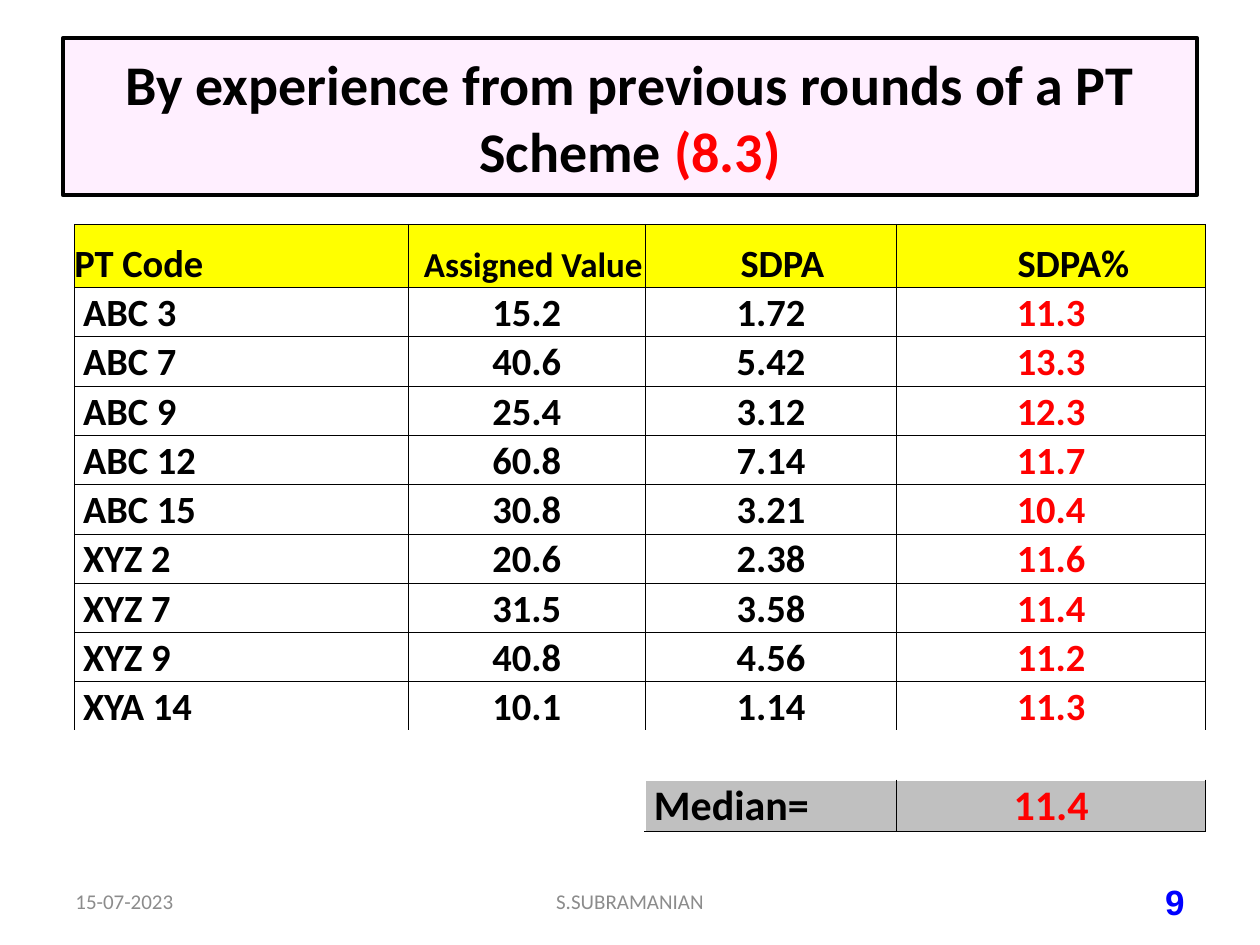
from dataclasses import dataclass

from lxml.etree import SubElement
from pptx import Presentation
from pptx.dml.color import RGBColor
from pptx.enum.text import MSO_ANCHOR, MSO_AUTO_SIZE, PP_ALIGN
from pptx.oxml import parse_xml
from pptx.oxml.ns import nsdecls, qn
from pptx.util import Pt


@dataclass(frozen=True)
class Theme:
    font: str = "Calibri"
    number_font: str = "Arial"
    black: str = "000000"
    red: str = "FF0000"
    blue: str = "0000FF"
    grey: str = "8C8C8C"
    title_fill: str = "FFEFFF"
    header_fill: str = "FFFF00"
    median_fill: str = "C0C0C0"
    title_size: int = 32
    median_size: int = 24
    body_size: int = 22
    small_header_size: int = 20
    number_size: int = 20
    footer_size: int = 12


theme = Theme()


def style_run(run, size, color, bold=True, font=theme.font):
    run.font.name = font
    run.font.size = Pt(size)
    run.font.bold = bold
    run.font.color.rgb = RGBColor.from_string(color)


def add_borders(cell):
    properties = cell._tc.get_or_add_tcPr()
    for position, side in enumerate(("lnL", "lnR", "lnT", "lnB")):
        line = parse_xml(f'<a:{side} {nsdecls("a")} w="{Pt(0.5)}"/>')
        fill = SubElement(line, qn("a:solidFill"))
        SubElement(fill, qn("a:srgbClr"), val=theme.black)
        properties.insert(position, line)


presentation = Presentation()
presentation.slide_width, presentation.slide_height = Pt(720), Pt(540)
slide = presentation.slides.add_slide(presentation.slide_layouts[5])

# Title
title = slide.shapes.title
title.left, title.top, title.width, title.height = Pt(36), Pt(21.6), Pt(648), Pt(90)
title.fill.solid()
title.fill.fore_color.rgb = RGBColor.from_string(theme.title_fill)
title.line.color.rgb = RGBColor.from_string(theme.black)
title.line.width = Pt(2.25)
title.text_frame.auto_size = MSO_AUTO_SIZE.NONE
title.text_frame.vertical_anchor = MSO_ANCHOR.MIDDLE
title_paragraph = title.text_frame.paragraphs[0]
title_paragraph.alignment = PP_ALIGN.CENTER
title_parts = [
    ("By experience from previous rounds of a PT Scheme ", theme.black),
    ("(8.3)", theme.red),
]
for text, color in title_parts:
    run = title_paragraph.add_run()
    run.text = text
    style_run(run, theme.title_size, color)

# Table contents
header = ["PT Code", "Assigned Value", "SDPA", "SDPA%"]
header_indents = [0, 9, 54.5, 69]
results = [
    ["ABC 3", "15.2", "1.72", "11.3"],
    ["ABC 7", "40.6", "5.42", "13.3"],
    ["ABC 9", "25.4", "3.12", "12.3"],
    ["ABC 12", "60.8", "7.14", "11.7"],
    ["ABC 15", "30.8", "3.21", "10.4"],
    ["XYZ 2", "20.6", "2.38", "11.6"],
    ["XYZ 7", "31.5", "3.58", "11.4"],
    ["XYZ 9", "40.8", "4.56", "11.2"],
    ["XYA 14", "10.1", "1.14", "11.3"],
]
rows = [header, *results, [""] * 4, ["", "", "Median=", "11.4"]]
median_row = len(rows) - 1
column_widths = [190.8, 135.4, 143.8, 176.4]
header_height, row_height = 36, 28.2

# Table
table = slide.shapes.add_table(
    len(rows), len(header), Pt(42.5), Pt(128.2), Pt(sum(column_widths)),
    Pt(header_height + row_height * median_row),
).table
table.first_row = table.horz_banding = False
for column, width in zip(table.columns, column_widths):
    column.width = Pt(width)

for row_index, values in enumerate(rows):
    is_header, is_median = row_index == 0, row_index == median_row
    table.rows[row_index].height = Pt(header_height if is_header else row_height)
    for column_index, text in enumerate(values):
        cell = table.cell(row_index, column_index)
        cell.margin_left = cell.margin_right = cell.margin_top = cell.margin_bottom = 0
        cell.vertical_anchor = MSO_ANCHOR.BOTTOM
        cell.fill.background()
        if not text:
            continue

        if is_header or is_median:
            cell.fill.solid()
            color = theme.header_fill if is_header else theme.median_fill
            cell.fill.fore_color.rgb = RGBColor.from_string(color)
        add_borders(cell)

        cell.text_frame.text = text
        paragraph = cell.text_frame.paragraphs[0]
        if is_header:
            cell.margin_left = Pt(header_indents[column_index])
        elif column_index == 0 or text == "Median=":
            cell.margin_left = Pt(5)
        else:
            paragraph.alignment = PP_ALIGN.CENTER

        size = theme.median_size if is_median else theme.body_size
        if text == "Assigned Value":
            size = theme.small_header_size
        is_result = column_index == 3 and not is_header
        style_run(paragraph.runs[0], size, theme.red if is_result else theme.black)

# Footer: date, author and slide number
footer = [
    ("15-07-2023", 36, 168, PP_ALIGN.LEFT,
     (theme.footer_size, theme.grey, False, theme.font)),
    ("S.SUBRAMANIAN", 246, 228, PP_ALIGN.CENTER,
     (theme.footer_size, theme.grey, False, theme.font)),
    ("9", 516, 168, PP_ALIGN.RIGHT,
     (theme.number_size, theme.blue, True, theme.number_font)),
]
for text, left, width, alignment, style in footer:
    text_frame = slide.shapes.add_textbox(
        Pt(left), Pt(500.5), Pt(width), Pt(28.75)
    ).text_frame
    text_frame.word_wrap = True
    text_frame.vertical_anchor = MSO_ANCHOR.MIDDLE
    text_frame.text = text
    paragraph = text_frame.paragraphs[0]
    paragraph.alignment = alignment
    style_run(paragraph.runs[0], *style)

presentation.save("out.pptx")
